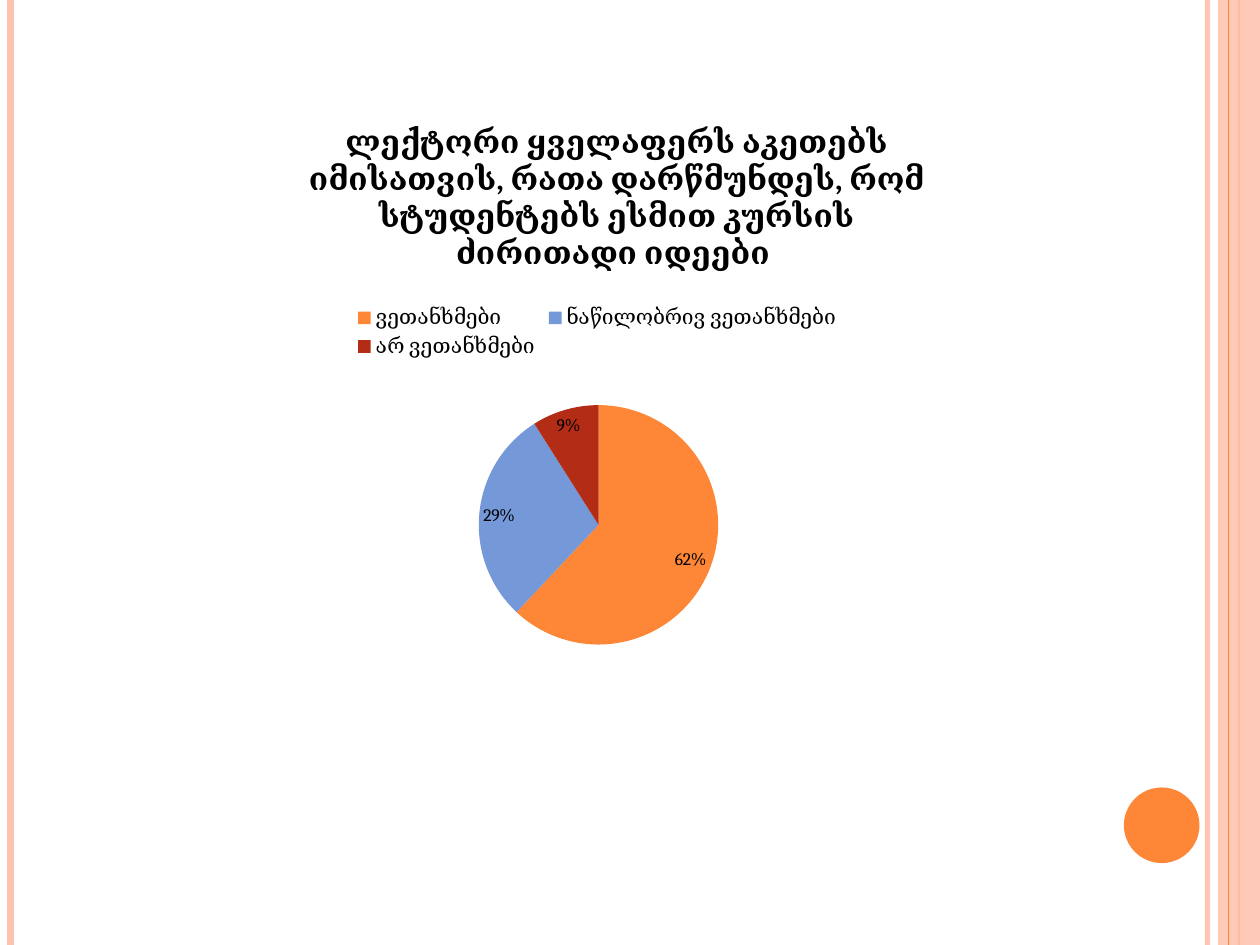
from lxml.etree import SubElement
from pptx import Presentation
from pptx.chart.data import CategoryChartData
from pptx.dml.color import RGBColor
from pptx.enum.chart import XL_CHART_TYPE as ChartType
from pptx.enum.chart import XL_LABEL_POSITION as LabelPosition
from pptx.enum.chart import XL_LEGEND_POSITION as LegendPosition
from pptx.enum.shapes import MSO_CONNECTOR as Connector
from pptx.enum.shapes import MSO_SHAPE as Shape
from pptx.oxml.ns import qn
from pptx.util import Pt

ORANGE = RGBColor(0xFE, 0x86, 0x37)
PEACH = RGBColor(0xFE, 0xC3, 0xAE)
BLUE = RGBColor(0x75, 0x98, 0xD9)
RED = RGBColor(0xB3, 0x2C, 0x16)
BLACK = RGBColor(0, 0, 0)
FONT = "Cambria"
WIDTH, HEIGHT = 720, 540

TITLE = ("ლექტორი ყველაფერს აკეთებს იმისათვის, რათა დარწმუნდეს, "
         "რომ სტუდენტებს ესმით კურსის ძირითადი იდეები ")
ANSWERS = [
    ("ვეთანხმები", 62, ORANGE),
    ("ნაწილობრივ ვეთანხმები", 29, BLUE),
    ("არ ვეთანხმები", 9, RED),
]

# x, line width, colour, opacity in percent
STRIPES_BEHIND = [(690, 3, PEACH, 93), (6, 4.5, PEACH, 100), (708, 1.5, ORANGE, 100)]
STRIPE_IN_FRONT = (702, 0.75, ORANGE, 100)
BAND = (696, 0, 24, HEIGHT)
DISC = (642.25, 450, 43.2, 43.2)
CHART = (114, 66, 456, 312)

# Parts of the chart's width and height
TITLE_PLACE = {"x": 0.13, "y": 0}
LEGEND_PLACE = {"x": 0.19, "y": 0.34}
PIE_PLACE = {"x": 0.35, "y": 0.53, "w": 0.3, "h": 0.44}


def set_opacity(shape, percent):
    color = next(shape.element.spPr.iter(qn("a:srgbClr")))
    SubElement(color, qn("a:alpha"), val=str(percent * 1000))


def add_stripe(slide, x, width, color, opacity):
    stripe = slide.shapes.add_connector(Connector.STRAIGHT, Pt(x), 0, Pt(x), Pt(HEIGHT))
    stripe.line.width = Pt(width)
    stripe.line.color.rgb = color
    if opacity < 100:
        set_opacity(stripe, opacity)
    SubElement(stripe.element.spPr, qn("a:effectLst"))


def add_filled(slide, kind, frame, color):
    shape = slide.shapes.add_shape(kind, *map(Pt, frame))
    shape.shadow.inherit = False
    shape.fill.solid()
    shape.fill.fore_color.rgb = color
    shape.line.fill.background()
    return shape


def set_font(font, size, bold=False):
    font.name = FONT
    font.size = Pt(size)
    font.bold = bold
    font.color.rgb = BLACK


def place(part, position, before, inner=False):
    """Give a chart part a manual layout, put in front of its child `before`."""
    for old in part.findall(qn("c:layout")):
        part.remove(old)
    layout = SubElement(part, qn("c:layout"))
    part.find(qn(before)).addprevious(layout)
    manual = SubElement(layout, qn("c:manualLayout"))
    if inner:
        SubElement(manual, qn("c:layoutTarget"), val="inner")
    for axis in "xy":
        SubElement(manual, qn(f"c:{axis}Mode"), val="edge")
    for key, value in position.items():
        SubElement(manual, qn(f"c:{key}"), val=str(value))


def add_answer_pie(slide):
    data = CategoryChartData()
    data.categories = [name for name, _, _ in ANSWERS]
    data.add_series("Series 1", [value for _, value, _ in ANSWERS])
    chart = slide.shapes.add_chart(ChartType.PIE, *map(Pt, CHART), data).chart
    set_font(chart.font, 10)

    chart.has_title = True
    span = chart.chart_title.text_frame.paragraphs[0].add_run()
    span.text = TITLE
    set_font(span.font, 18, bold=True)
    chart.chart_title.include_in_layout = False

    chart.has_legend = True
    chart.legend.position = LegendPosition.TOP
    chart.legend.include_in_layout = False
    set_font(chart.legend.font, 12)

    plot = chart.plots[0]
    plot.vary_by_categories = True
    for index, (_, _, color) in enumerate(ANSWERS):
        fill = plot.series[0].points[index].format.fill
        fill.solid()
        fill.fore_color.rgb = color

    plot.has_data_labels = True
    labels = plot.data_labels
    labels.show_value = False
    labels.show_percentage = True
    labels.number_format = "0%"
    labels.number_format_is_linked = False
    labels.position = LabelPosition.BEST_FIT
    set_font(labels.font, 10)

    root = chart.element
    place(next(root.iter(qn("c:title"))), TITLE_PLACE, "c:overlay")
    place(next(root.iter(qn("c:legend"))), LEGEND_PLACE, "c:overlay")
    place(next(root.iter(qn("c:plotArea"))), PIE_PLACE, "c:pieChart", inner=True)


deck = Presentation()
deck.slide_width, deck.slide_height = Pt(WIDTH), Pt(HEIGHT)
page = deck.slides.add_slide(deck.slide_layouts[6])
for stripe_spec in STRIPES_BEHIND:
    add_stripe(page, *stripe_spec)
set_opacity(add_filled(page, Shape.RECTANGLE, BAND, PEACH), 87)
add_stripe(page, *STRIPE_IN_FRONT)
add_filled(page, Shape.OVAL, DISC, ORANGE)
add_answer_pie(page)
deck.save("out.pptx")
